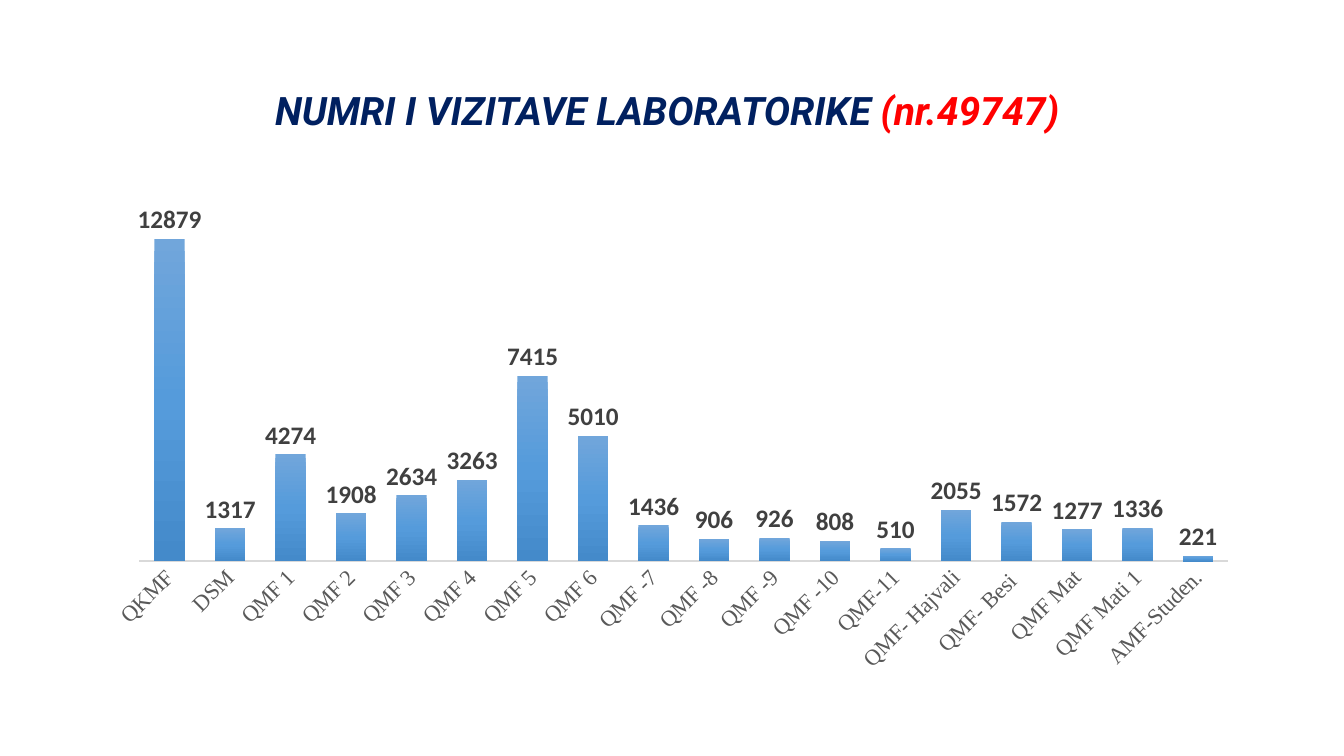
from copy import deepcopy
from dataclasses import dataclass

from pptx import Presentation
from pptx.chart.data import CategoryChartData
from pptx.dml.color import RGBColor
from pptx.enum.chart import XL_CHART_TYPE, XL_LABEL_POSITION, XL_TICK_MARK
from pptx.enum.text import MSO_ANCHOR, MSO_AUTO_SIZE, PP_ALIGN
from pptx.oxml.ns import qn
from pptx.util import Emu, Pt


@dataclass(frozen=True)
class Theme:
    heading_font: str = "Roboto"
    label_font: str = "Calibri"
    axis_font: str = "Times New Roman"
    heading_color: str = "002060"
    total_color: str = "FF0000"
    base_color: str = "000000"
    label_color: str = "404040"
    axis_color: str = "595959"
    axis_line: str = "D9D9D9"
    bar_gradient: tuple = ("71A6DB", "559BDB", "448ACA")
    heading_size: int = 28
    label_size: int = 18
    axis_size: int = 16
    base_size: int = 10


VISITS = {
    "QKMF": 12879,
    "DSM": 1317,
    "QMF 1": 4274,
    "QMF 2": 1908,
    "QMF 3": 2634,
    "QMF 4": 3263,
    "QMF 5": 7415,
    "QMF 6": 5010,
    "QMF -7": 1436,
    "QMF -8": 906,
    "QMF -9": 926,
    "QMF -10": 808,
    "QMF-11": 510,
    "QMF- Hajvali": 2055,
    "QMF- Besi ": 1572,
    "QMF Mat": 1277,
    "QMF Mati 1": 1336,
    "AMF-Studen.": 221,
}


def px(length):
    return Emu(length * 9525)


class SlideBuilder:
    def __init__(self, slide, theme):
        self.slide = slide
        self.theme = theme

    def style(self, font, name, size, color, bold=False, italic=False):
        font.name = name
        font.size = Pt(size)
        font.bold = bold
        font.italic = italic
        font.color.rgb = RGBColor.from_string(color)

    def title(self, heading, total, left, top, width, height, indent):
        theme = self.theme
        title = self.slide.shapes.title
        title.left, title.top = px(left), px(top)
        title.width, title.height = px(width), px(height)
        frame = title.text_frame
        frame.auto_size = MSO_AUTO_SIZE.NONE
        frame.vertical_anchor = MSO_ANCHOR.MIDDLE
        frame.margin_left = px(indent)
        frame.text = heading
        line = frame.paragraphs[0]
        line.alignment = PP_ALIGN.LEFT
        line.line_spacing = 0.9
        line.add_run().text = total
        for run, color in zip(line.runs, (theme.heading_color, theme.total_color)):
            self.style(run.font, theme.heading_font, theme.heading_size, color, True, True)

    def column_chart(self, visits, left, top, width, height):
        theme = self.theme
        chart_data = CategoryChartData()
        chart_data.categories = list(visits)
        chart_data.add_series("Series 1", list(visits.values()))
        chart = self.slide.shapes.add_chart(
            XL_CHART_TYPE.COLUMN_CLUSTERED,
            px(left), px(top), px(width), px(height), chart_data,
        ).chart
        chart.has_title = False
        chart.has_legend = False
        self.style(chart.font, theme.label_font, theme.base_size, theme.base_color)
        chart.value_axis.visible = False
        chart.value_axis.has_major_gridlines = False

        clinics = chart.category_axis
        clinics.major_tick_mark = XL_TICK_MARK.NONE
        clinics.format.line.color.rgb = RGBColor.from_string(theme.axis_line)
        clinics.format.line.width = Pt(1)
        self.style(clinics.tick_labels.font, theme.axis_font, theme.axis_size, theme.axis_color)
        clinics._element.find(f".//{qn('a:bodyPr')}").set("rot", "-2700000")

        plot = chart.plots[0]
        plot.gap_width = 100
        plot.overlap = -24
        plot.vary_by_categories = False
        self.gradient(plot.series[0])
        plot.has_data_labels = True
        labels = plot.data_labels
        labels.show_value = True
        labels.position = XL_LABEL_POSITION.OUTSIDE_END
        self.style(labels.font, theme.label_font, theme.label_size, theme.label_color, True)

    def gradient(self, series):
        colors = self.theme.bar_gradient
        fill = series.format.fill
        fill.gradient()
        fill.gradient_angle = 270
        stops = series._element.find(f".//{qn('a:gsLst')}")
        stops.insert(1, deepcopy(stops[0]))
        for index, (stop, color) in enumerate(zip(fill.gradient_stops, colors)):
            stop.position = index / (len(colors) - 1)
            stop.color.rgb = RGBColor.from_string(color)


def main():
    presentation = Presentation()
    presentation.slide_width = px(1280)
    presentation.slide_height = px(720)
    slide = presentation.slides.add_slide(presentation.slide_layouts[5])
    builder = SlideBuilder(slide, Theme())
    builder.title("NUMRI I VIZITAVE LABORATORIKE ", "(nr.49747)", 88, 38, 1104, 139, 174)
    builder.column_chart(VISITS, 88, 192, 1104, 457)
    presentation.save("out.pptx")


if __name__ == "__main__":
    main()
